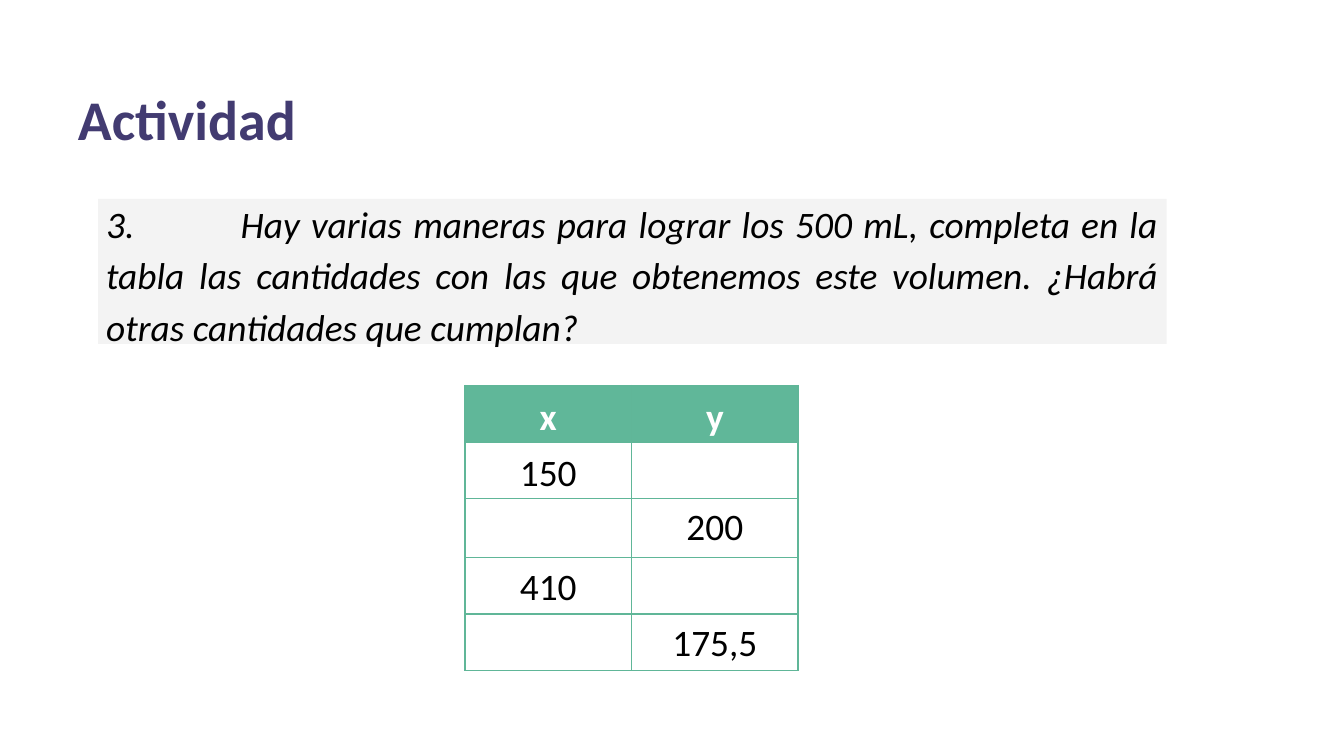
from lxml import etree
from pptx import Presentation
from pptx.dml.color import RGBColor
from pptx.enum.shapes import MSO_SHAPE
from pptx.enum.text import MSO_ANCHOR, PP_ALIGN
from pptx.oxml.ns import qn
from pptx.util import Inches, Pt

COLORS = {
    "title": "423B71",
    "panel": "F3F3F3",
    "text": "000000",
    "header": "60B799",
    "header_text": "FFFFFF",
    "border": "60B698",
}


class SlideBuilder:
    font = "Calibri"
    body_size = 20
    line_spacing = 1.15

    def __init__(self, prs):
        self.slide = prs.slides.add_slide(prs.slide_layouts[6])

    def color(self, name):
        return RGBColor.from_string(COLORS[name])

    def format_text(self, p, color, size=body_size, bold=False, italic=False):
        for r in p.runs:
            r.font.name = self.font
            r.font.size = Pt(size)
            r.font.bold = bold
            r.font.italic = italic
            r.font.color.rgb = self.color(color)

    def set_margins(self, frame, x, y):
        frame.margin_left = frame.margin_right = Inches(x)
        frame.margin_top = frame.margin_bottom = Inches(y)

    def title(self, text, left, top, width, height):
        sp = self.slide.shapes.add_textbox(
            Inches(left), Inches(top), Inches(width), Inches(height))
        tf = sp.text_frame
        tf.word_wrap = True
        self.set_margins(tf, 0.07, 0.07)
        tf.text = text
        self.format_text(tf.paragraphs[0], "title", size=30, bold=True)

    def tab_stop(self, p, position):
        tabs = etree.SubElement(p._p.get_or_add_pPr(), qn("a:tabLst"))
        etree.SubElement(tabs, qn("a:tab"), pos=str(Inches(position)), algn="l")

    def panel(self, text, left, top, width, height, tab):
        sp = self.slide.shapes.add_shape(
            MSO_SHAPE.RECTANGLE,
            Inches(left), Inches(top), Inches(width), Inches(height))
        sp.shadow.inherit = False
        sp.fill.solid()
        sp.fill.fore_color.rgb = self.color("panel")
        sp.line.fill.background()
        tf = sp.text_frame
        tf.word_wrap = True
        tf.vertical_anchor = MSO_ANCHOR.MIDDLE
        self.set_margins(tf, 0.06, 0.06)
        tf.text = text
        p = tf.paragraphs[0]
        p.alignment = PP_ALIGN.JUSTIFY
        p.line_spacing = self.line_spacing
        self.tab_stop(p, tab)
        self.format_text(p, "text", italic=True)

    def cell_borders(self, cell):
        tc_pr = cell._tc.get_or_add_tcPr()
        for side in ("lnL", "lnR", "lnT", "lnB"):
            ln = etree.SubElement(tc_pr, qn(f"a:{side}"), w=str(Pt(1)))
            fill = etree.SubElement(ln, qn("a:solidFill"))
            etree.SubElement(fill, qn("a:srgbClr"), val=COLORS["border"])

    def table(self, rows, left, top, col_width, row_heights, middle_rows):
        n_cols = len(rows[0])
        table = self.slide.shapes.add_table(
            len(rows), n_cols, Inches(left), Inches(top),
            Inches(col_width * n_cols), Inches(sum(row_heights))).table
        for column in table.columns:
            column.width = Inches(col_width)
        for i, values in enumerate(rows):
            table.rows[i].height = Inches(row_heights[i])
            for j, value in enumerate(values):
                cell = table.cell(i, j)
                self.cell_borders(cell)
                self.set_margins(cell, 0.07, 0)
                if i < middle_rows:
                    cell.vertical_anchor = MSO_ANCHOR.MIDDLE
                header = i == 0
                if header:
                    cell.fill.solid()
                    cell.fill.fore_color.rgb = self.color("header")
                else:
                    cell.fill.background()
                if value:
                    p = cell.text_frame.paragraphs[0]
                    p.text = value
                    p.alignment = PP_ALIGN.CENTER
                    p.line_spacing = self.line_spacing
                    self.format_text(
                        p, "header_text" if header else "text", bold=header)


def main():
    prs = Presentation()
    # Widescreen 16:9
    prs.slide_width = Inches(10)
    prs.slide_height = Inches(10 * 9 / 16)
    s = SlideBuilder(prs)

    # Heading and exercise statement
    s.title("Actividad", 0.51, 0.56, 8.98, 0.66)
    s.panel(
        "3.\tHay varias maneras para lograr los 500 mL, completa en la tabla "
        "las cantidades con las que obtenemos este volumen. ¿Habrá otras "
        "cantidades que cumplan?",
        0.73, 1.48, 7.95, 1.08, tab=1)

    # Table of quantities to complete
    quantities = [
        ("x", "y"),
        ("150", ""),
        ("", "200"),
        ("410", ""),
        ("", "175,5"),
    ]
    s.table(quantities, 3.46, 2.87, 1.24,
            [0.42, 0.42, 0.44, 0.42, 0.42], middle_rows=2)

    prs.save("out.pptx")


if __name__ == "__main__":
    main()
